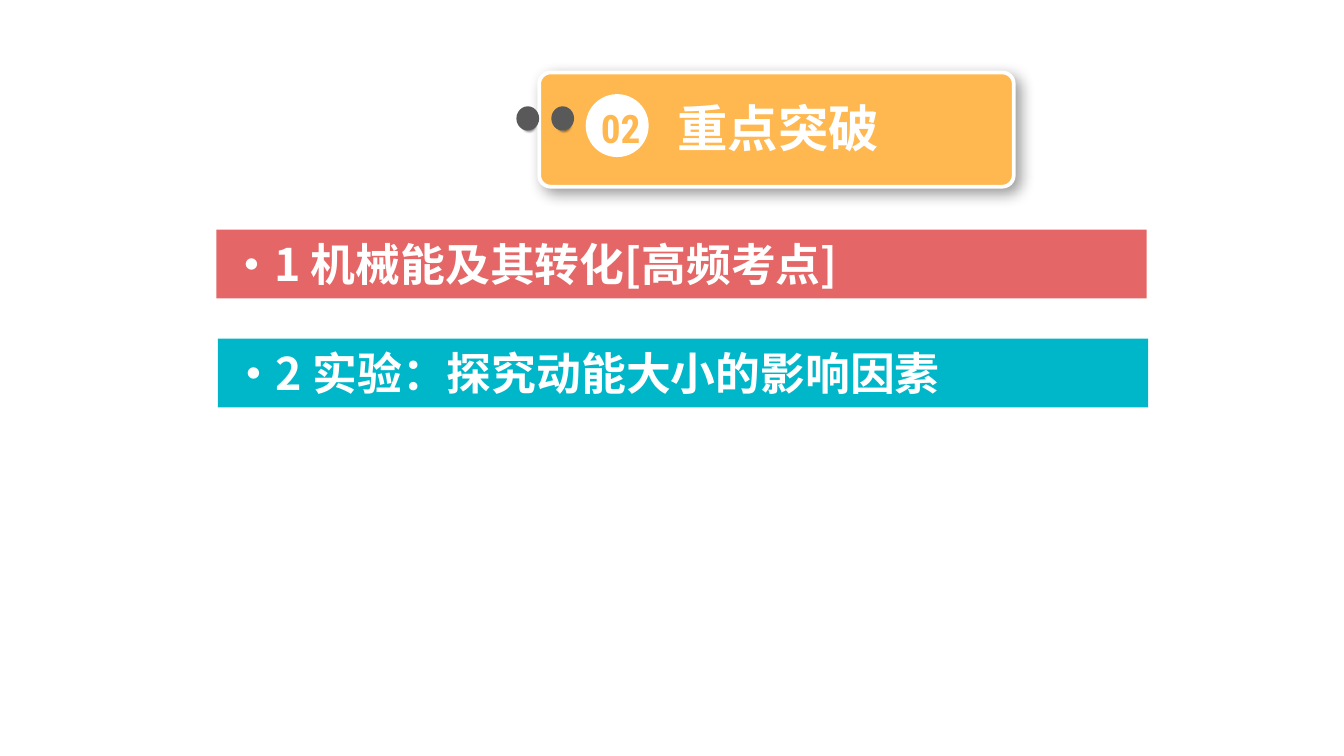
from lxml import etree
from pptx import Presentation
from pptx.dml.color import RGBColor
from pptx.enum.shapes import MSO_SHAPE as SHAPE
from pptx.enum.text import MSO_ANCHOR as ANCHOR, PP_ALIGN as ALIGN
from pptx.oxml import parse_xml
from pptx.oxml.ns import nsdecls, qn
from pptx.util import Cm, Pt

WHITE = RGBColor(0xFF, 0xFF, 0xFF)
ORANGE = RGBColor(0xFF, 0xB8, 0x50)
RED = RGBColor(0xE5, 0x66, 0x66)
TEAL = RGBColor(0x00, 0xB7, 0xCA)
GREY = RGBColor(0x59, 0x59, 0x59)
METAL = [(0, "FFFFFF"), (17, "A6A6A6"), (35, "F2F2F2"),
         (55, "A6A6A6"), (75, "F2F2F2"), (100, "A6A6A6")]
CJK, LATIN = "Noto Sans CJK SC", "Roboto Condensed"


def add_shape(shapes, kind, box, color=None):
    """Add a preset shape without line or shadow; box is in cm."""
    sp = shapes.add_shape(kind, *map(Cm, box))
    sp.shadow.inherit = False
    sp.line.fill.background()
    if color is not None:
        sp.fill.solid()
        sp.fill.fore_color.rgb = color
    return sp


def add_shadow(sp, blur, dist):
    effects = sp._element.spPr.find(qn("a:effectLst"))
    effects.append(parse_xml(
        f'<a:outerShdw {nsdecls("a")} blurRad="{Pt(blur)}" dist="{Pt(dist)}" '
        'dir="2700000" algn="tl" rotWithShape="0"><a:srgbClr val="000000">'
        '<a:alpha val="40000"/></a:srgbClr></a:outerShdw>'))


def fill_metal(sp):
    sp.fill.gradient()
    grad = sp._element.spPr.find(qn("a:gradFill"))
    stops = "".join(f'<a:gs pos="{pos * 1000}"><a:srgbClr val="{color}"/></a:gs>'
                    for pos, color in METAL)
    grad.replace(grad.find(qn("a:gsLst")),
                 parse_xml(f'<a:gsLst {nsdecls("a")}>{stops}</a:gsLst>'))
    sp.fill.gradient_angle = 315


def write(sp, text, size, font, color, align):
    tf = sp.text_frame
    tf.word_wrap = True
    tf.vertical_anchor = ANCHOR.MIDDLE
    p = tf.paragraphs[0]
    p.alignment = align
    r = p.add_run()
    r.text = text
    for name, value in {"size": Pt(size), "name": font, "bold": True}.items():
        setattr(r.font, name, value)
    r.font.color.rgb = color
    etree.SubElement(r._r.get_or_add_rPr(), qn("a:ea"), typeface=font)


def add_pin(shapes, x, y):
    hole = add_shape(shapes, SHAPE.OVAL, (x + 0.09, y + 0.2, 0.25, 0.25))
    hole.rotation = 270
    fill_metal(hole)
    add_shadow(hole, 1, 1)
    add_shape(shapes, SHAPE.OVAL, (x, y, 0.43, 0.46), GREY)


def add_section_card(slide, box, number, title):
    x, y, w, h = box
    shapes = slide.shapes.add_group_shape().shapes
    card = add_shape(shapes, SHAPE.ROUNDED_RECTANGLE, box, ORANGE)
    card.adjustments[0] = 0.1
    card.line.color.rgb = WHITE
    card.line.width = Pt(2)
    add_shadow(card, 8, 4)
    for dx in (0.23, -0.43):
        add_pin(shapes, x + dx, y + 0.64)
    label = shapes.add_textbox(Cm(x + 1.37), Cm(y + 0.33), Cm(6.3), Cm(1.42))
    write(label, title, 27, CJK, WHITE, ALIGN.CENTER)
    add_shape(shapes, SHAPE.OVAL, (x + 0.88, y + 0.41, 1.19, 1.19), WHITE)
    label = shapes.add_textbox(Cm(x + 0.83), Cm(y + 0.48), Cm(1.42), Cm(1.14))
    write(label, number, 21, LATIN, ORANGE, ALIGN.CENTER)


def add_topic_bar(slide, box, text, color):
    bar = add_shape(slide.shapes, SHAPE.RECTANGLE, box, color)
    write(bar, text, 24, CJK, WHITE, ALIGN.LEFT)


def main():
    prs = Presentation()
    prs.slide_width, prs.slide_height = Cm(25.4), Cm(14.29)
    slide = prs.slides.add_slide(prs.slide_layouts[6])
    add_section_card(slide, (10.19, 1.37, 8.97, 2.16), "02", "重点突破")
    add_topic_bar(slide, (4.09, 4.34, 17.58, 1.3), "·1 机械能及其转化[高频考点]", RED)
    add_topic_bar(slide, (4.12, 6.4, 17.58, 1.3), "·2 实验：探究动能大小的影响因素", TEAL)
    prs.save("out.pptx")


if __name__ == "__main__":
    main()
